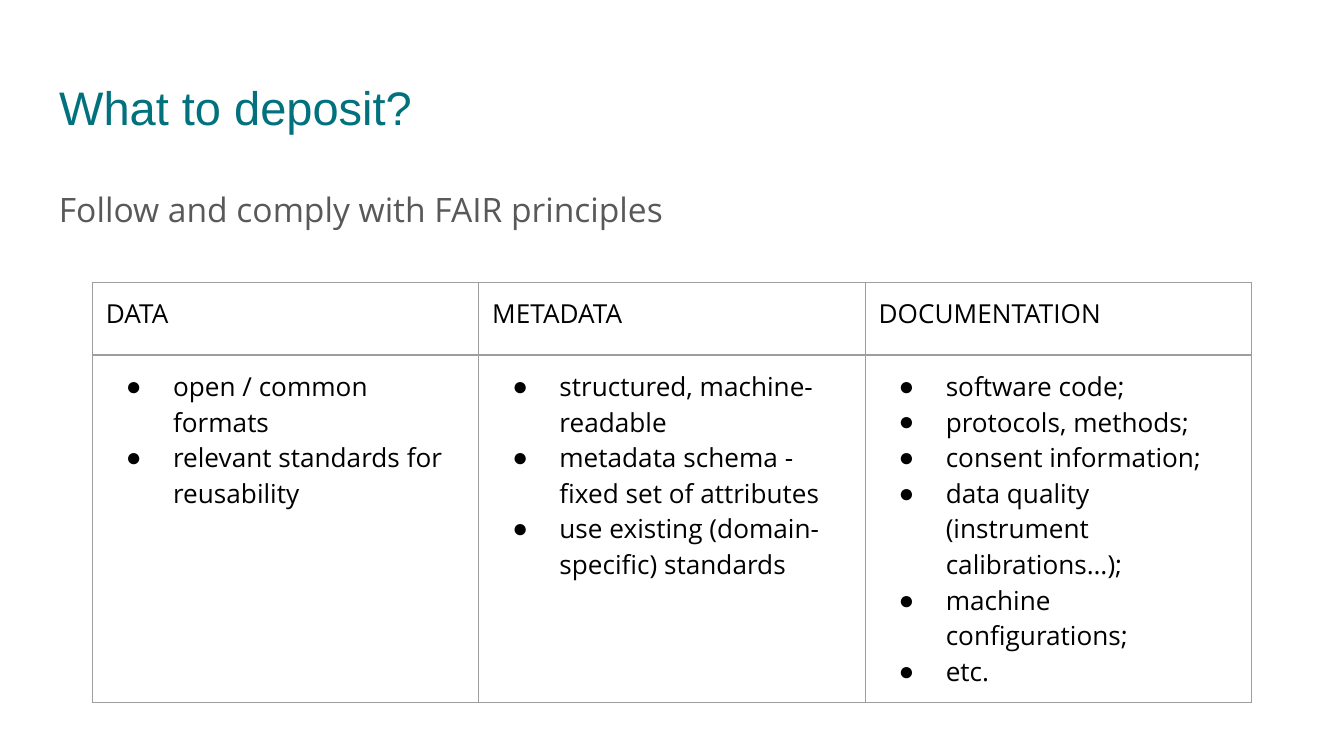
"""Build the slide on what to deposit."""
from dataclasses import dataclass

from lxml.etree import SubElement
from pptx import Presentation
from pptx.dml.color import RGBColor
from pptx.enum.text import MSO_ANCHOR, MSO_AUTO_SIZE, PP_ALIGN
from pptx.oxml.ns import qn
from pptx.util import Pt


@dataclass(frozen=True)
class Theme:
    """Colours, fonts, type sizes and spacing."""
    title: str = "00717D"
    subtitle: str = "595959"
    text: str = "000000"
    border: str = "9E9E9E"
    title_font: str = "Arial"
    body_font: str = "Open Sans"
    bullet_font: str = "Arial"
    title_size: float = 25.2
    subtitle_size: float = 18
    table_size: float = 14
    inset: float = 7.2


THEME = Theme()
ROW_HEIGHTS = [Pt(38.9), Pt(186)]
COLUMNS = {
    "DATA": ["open / common formats", "relevant standards for reusability"],
    "METADATA": [
        "structured, machine-readable",
        "metadata schema - fixed set of attributes",
        "use existing (domain-specific) standards",
    ],
    "DOCUMENTATION": [
        "software code;",
        "protocols, methods;",
        "consent information;",
        "data quality (instrument calibrations…);",
        "machine configurations;",
        "etc.",
    ],
}


def set_insets(obj):
    """Give a text frame or a cell the common inset."""
    obj.margin_left = obj.margin_right = Pt(THEME.inset)
    obj.margin_top = obj.margin_bottom = Pt(THEME.inset)


def format_text(tf, font, size, color):
    """Format every run of a text frame."""
    for p in tf.paragraphs:
        p.alignment = PP_ALIGN.LEFT
        for r in p.runs:
            r.font.name = font
            r.font.size = Pt(size)
            r.font.color.rgb = RGBColor.from_string(color)


def add_title(s, text):
    """Fill and place the title placeholder."""
    sp = s.shapes.title
    sp.left, sp.top, sp.width, sp.height = Pt(24.5), Pt(35), Pt(671), Pt(45.1)
    tf = sp.text_frame
    tf.text = text
    tf.word_wrap = True
    tf.auto_size = MSO_AUTO_SIZE.NONE
    tf.vertical_anchor = MSO_ANCHOR.TOP
    set_insets(tf)
    format_text(tf, THEME.title_font, THEME.title_size, THEME.title)


def add_subtitle(s, text):
    """Add the line of text below the title."""
    tf = s.shapes.add_textbox(Pt(24.5), Pt(90.7), Pt(671), Pt(269)).text_frame
    tf.text = text
    tf.word_wrap = True
    set_insets(tf)
    p = tf.paragraphs[0]
    p.line_spacing = 1.15
    p.space_after = Pt(12)
    format_text(tf, THEME.body_font, THEME.subtitle_size, THEME.subtitle)


def set_borders(cell):
    """Draw a thin line on all four sides of a cell."""
    tc_pr = cell._tc.get_or_add_tcPr()
    for side in ("lnL", "lnR", "lnT", "lnB"):
        ln = SubElement(tc_pr, qn(f"a:{side}"), w=str(Pt(0.75)))
        fill = SubElement(ln, qn("a:solidFill"))
        SubElement(fill, qn("a:srgbClr"), val=THEME.border)


def set_bullet(p):
    """Give a paragraph a round bullet with a hanging indent."""
    p_pr = p._p.get_or_add_pPr()
    p_pr.set("marL", str(Pt(36)))
    p_pr.set("indent", str(-Pt(25.2)))
    color = SubElement(p_pr, qn("a:buClr"))
    SubElement(color, qn("a:srgbClr"), val=THEME.text)
    SubElement(p_pr, qn("a:buFont"), typeface=THEME.bullet_font)
    SubElement(p_pr, qn("a:buChar"), char="●")


def fill_cell(cell, text, bulleted=False):
    """Write and format one table cell."""
    tf = cell.text_frame
    tf.text = text
    set_insets(cell)
    set_borders(cell)
    cell.fill.background()
    format_text(tf, THEME.body_font, THEME.table_size, THEME.text)
    if bulleted:
        for p in tf.paragraphs:
            set_bullet(p)


def add_columns(s, columns):
    """Add a table with one heading and one bulleted list per column."""
    frame = s.shapes.add_table(
        len(ROW_HEIGHTS), len(columns), Pt(49.5), Pt(151.3), Pt(621), sum(ROW_HEIGHTS)
    )
    table = frame.table
    table.first_row = table.horz_banding = False
    for row, height in zip(table.rows, ROW_HEIGHTS):
        row.height = height
    for i, (heading, items) in enumerate(columns.items()):
        fill_cell(table.cell(0, i), heading)
        fill_cell(table.cell(1, i), "\n".join(items), bulleted=True)


def main():
    """Build and save the slide."""
    prs = Presentation()
    prs.slide_width, prs.slide_height = Pt(720), Pt(405)
    s = prs.slides.add_slide(prs.slide_layouts[5])
    add_title(s, "What to deposit?")
    add_subtitle(s, "Follow and comply with FAIR principles")
    add_columns(s, COLUMNS)
    prs.save("out.pptx")


if __name__ == "__main__":
    main()
